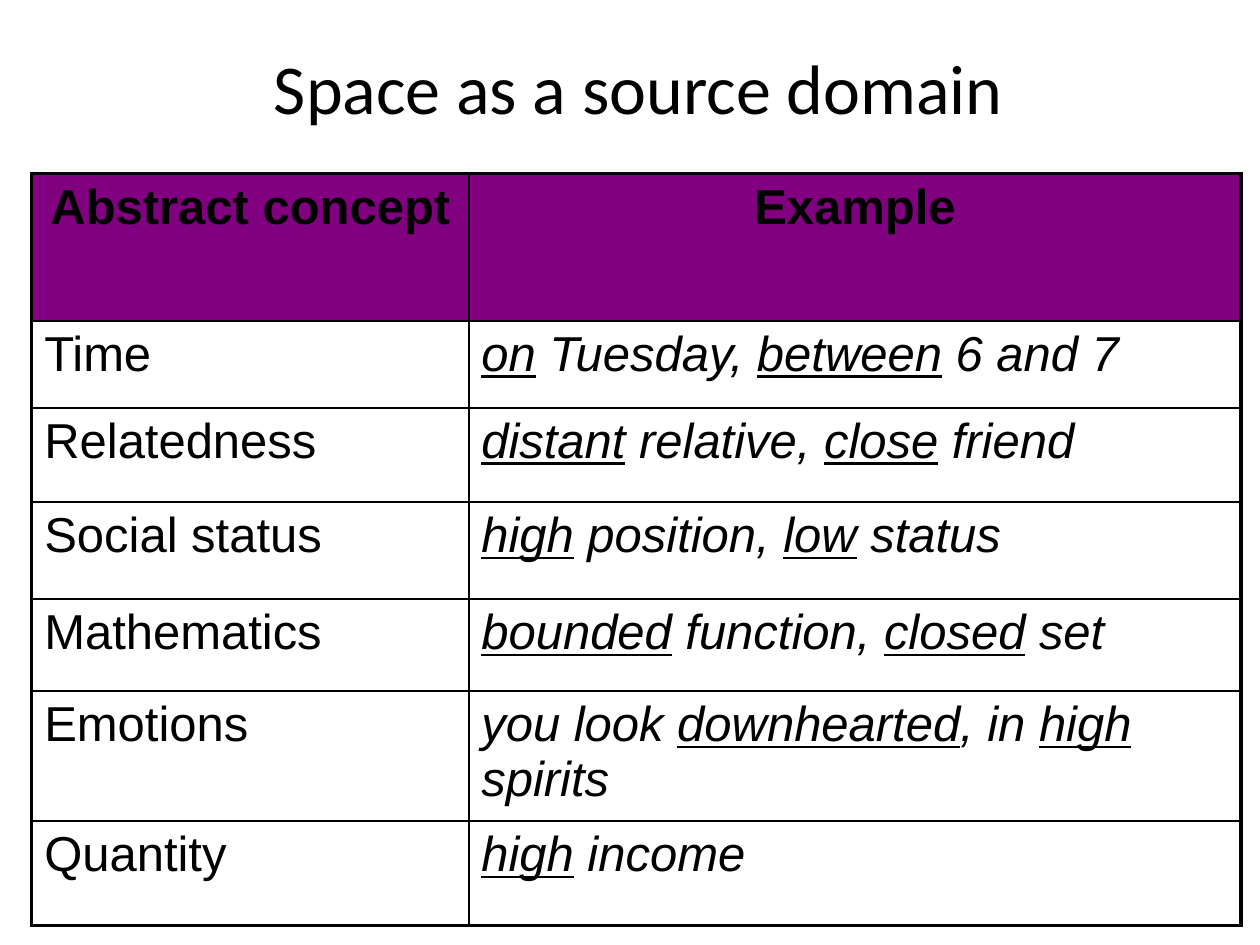
from dataclasses import dataclass

import pptx
import pptx.dml.color
import pptx.enum.text
import pptx.oxml
import pptx.oxml.ns
import pptx.util
from pptx.util import Cm

CENTER = pptx.enum.text.PP_ALIGN.CENTER


@dataclass(frozen=True)
class Theme:
    text: str = "000000"
    border: str = "000000"
    header: str = "800080"
    title_font: str = "Calibri"
    table_font: str = "Arial"
    title_size: int = 40
    table_size: int = 28
    outer_line: float = 2.25
    inner_line: float = 1


THEME = Theme()
COLUMN_WIDTHS = (8.81, 15.57)
ROW_HEIGHTS = (2.97, 1.75, 1.9, 1.96, 1.85, 2.62, 2.11)
HEADERS = ("Abstract concept", "Example")
# Underscores enclose the spatial words, which are underlined.
EXAMPLES = (
    ("Time", "_on_ Tuesday, _between_ 6 and 7"),
    ("Relatedness", "_distant_ relative, _close_ friend"),
    ("Social status", "_high_ position, _low_ status"),
    ("Mathematics", "_bounded_ function, _closed_ set"),
    ("Emotions", "you look _downhearted_, in _high_ spirits"),
    ("Quantity", "_high_ income"),
)


def rgb(value):
    return pptx.dml.color.RGBColor.from_string(value)


def add_run(paragraph, text, font_name, size, bold=False, italic=False, underline=False):
    run = paragraph.add_run()
    run.text = text
    font = run.font
    font.name = font_name
    font.size = pptx.util.Pt(size)
    font.color.rgb = rgb(THEME.text)
    font.bold, font.italic, font.underline = bold, italic, underline


def add_title(slide, text):
    title = slide.shapes.title
    title.left, title.top, title.width, title.height = Cm(0.43), Cm(0.76), Cm(24.56), Cm(1.98)
    frame = title.text_frame
    frame.vertical_anchor = pptx.enum.text.MSO_ANCHOR.MIDDLE
    paragraph = frame.paragraphs[0]
    paragraph.alignment = CENTER
    add_run(paragraph, text, THEME.title_font, THEME.title_size)


def set_borders(cell, outer_sides):
    """Draw all four sides, heavier where the cell meets the table's edge."""
    properties = cell._tc.get_or_add_tcPr()
    for side, is_outer in outer_sides.items():
        width = pptx.util.Pt(THEME.outer_line if is_outer else THEME.inner_line)
        properties.append(pptx.oxml.parse_xml(
            f'<a:ln{side} {pptx.oxml.ns.nsdecls("a")} w="{width}"><a:solidFill>'
            f'<a:srgbClr val="{THEME.border}"/></a:solidFill></a:ln{side}>'
        ))


def fill_cell(cell, text, is_header, is_example):
    if is_header:
        cell.fill.solid()
        cell.fill.fore_color.rgb = rgb(THEME.header)
    else:
        cell.fill.background()
    paragraph = cell.text_frame.paragraphs[0]
    if is_header:
        paragraph.alignment = CENTER
    for index, part in enumerate(text.split("_")):
        if part:
            add_run(paragraph, part, THEME.table_font, THEME.table_size, bold=is_header,
                    italic=is_example and not is_header, underline=index % 2 == 1)


def add_concept_table(slide):
    rows = (HEADERS, *EXAMPLES)
    frame = slide.shapes.add_table(
        len(rows), len(HEADERS), Cm(0.64), Cm(3.5),
        Cm(sum(COLUMN_WIDTHS)), Cm(sum(ROW_HEIGHTS)),
    )
    table = frame.table
    table.first_row = table.horz_banding = False
    for column, width in zip(table.columns, COLUMN_WIDTHS):
        column.width = Cm(width)
    for row, height in zip(table.rows, ROW_HEIGHTS):
        row.height = Cm(height)
    for row_index, texts in enumerate(rows):
        for column_index, text in enumerate(texts):
            cell = table.cell(row_index, column_index)
            set_borders(cell, {
                "L": column_index == 0,
                "R": column_index == len(HEADERS) - 1,
                "T": row_index == 0,
                "B": row_index == len(rows) - 1,
            })
            fill_cell(cell, text, row_index == 0, column_index == 1)


def main():
    presentation = pptx.Presentation()
    presentation.slide_width, presentation.slide_height = Cm(25.4), Cm(19.05)
    slide = presentation.slides.add_slide(presentation.slide_layouts.get_by_name("Title Only"))
    add_title(slide, " Space as a source domain")
    add_concept_table(slide)
    presentation.save("out.pptx")


if __name__ == "__main__":
    main()
